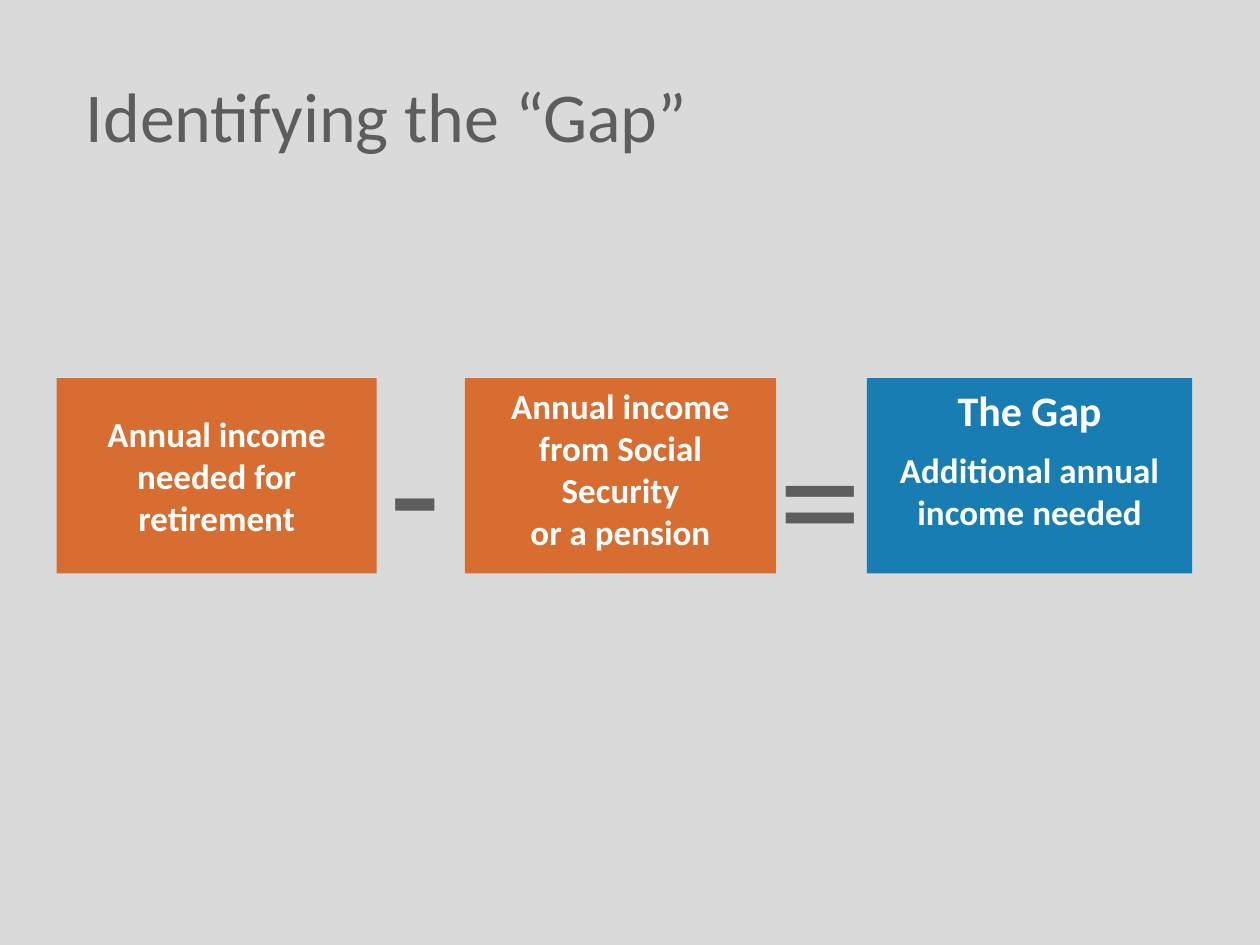
from dataclasses import dataclass

from pptx import Presentation
from pptx.dml.color import RGBColor
from pptx.enum.shapes import MSO_SHAPE
from pptx.enum.text import MSO_ANCHOR, PP_ALIGN
from pptx.util import Pt

RECT = MSO_SHAPE.RECTANGLE
TOP, MIDDLE = MSO_ANCHOR.TOP, MSO_ANCHOR.MIDDLE
LEFT, CENTER = PP_ALIGN.LEFT, PP_ALIGN.CENTER

GREY = RGBColor(0xDA, 0xDA, 0xDA)
DARK = RGBColor(0x5D, 0x5D, 0x5D)
ORANGE = RGBColor(0xD7, 0x6D, 0x31)
BLUE = RGBColor(0x17, 0x7D, 0xB3)
WHITE = RGBColor(0xFF, 0xFF, 0xFF)

FONT = "Calibri"
ROW, HIGH = 216, 111.6  # top and height of the row of terms


@dataclass
class Term:
    left: float
    width: float
    fill: RGBColor
    lines: list[tuple[str, int]]  # text and size of each paragraph
    anchor: MSO_ANCHOR = MIDDLE


@dataclass
class Sign:
    text: str
    left: float
    top: float


TERMS = [
    Term(32.4, 182.9, ORANGE, [("Annual income needed for retirement", 20)]),
    Term(265.7, 177.8, ORANGE,
         [("Annual income from Social Security\vor a pension", 20)], TOP),
    Term(495.4, 185.8, BLUE,
         [("The Gap", 24), ("Additional annual income needed", 20)], TOP),
]
SIGNS = [Sign("-", 215.3, ROW), Sign("=", 437.8, 219.6)]


def style(para, size: float, color: RGBColor, bold: bool, align: PP_ALIGN) -> None:
    para.alignment = align
    for run in para.runs:
        font = run.font
        font.name, font.size, font.bold = FONT, Pt(size), bold
        font.color.rgb = color


def draw_term(slide, term: Term) -> None:
    box = slide.shapes.add_shape(
        RECT, Pt(term.left), Pt(ROW), Pt(term.width), Pt(HIGH))
    box.shadow.inherit = False
    box.fill.solid()
    box.fill.fore_color.rgb = term.fill
    box.line.fill.background()
    frame = box.text_frame
    frame.word_wrap = True
    frame.vertical_anchor = term.anchor
    frame.margin_left = frame.margin_right = Pt(10)
    for i, (text, size) in enumerate(term.lines):
        para = frame.add_paragraph() if i else frame.paragraphs[0]
        para.text = text
        if i:
            para.space_before = Pt(8)
        style(para, size, WHITE, True, CENTER)


def draw_sign(slide, sign: Sign) -> None:
    box = slide.shapes.add_textbox(
        Pt(sign.left), Pt(sign.top), Pt(54.7), Pt(123.8))
    frame = box.text_frame
    frame.word_wrap = True
    frame.text = sign.text
    style(frame.paragraphs[0], 96, DARK, False, LEFT)


def main() -> None:
    deck = Presentation()
    deck.slide_width, deck.slide_height = Pt(720), Pt(540)
    slide = deck.slides.add_slide(deck.slide_layouts[5])
    slide.background.fill.solid()
    slide.background.fill.fore_color.rgb = GREY

    # Title
    title = slide.shapes.title
    title.left, title.top = Pt(41.8), Pt(41.8)
    title.width, title.height = Pt(678), Pt(47.5)
    frame = title.text_frame
    frame.vertical_anchor = MIDDLE
    frame.text = "Identifying the “Gap”"
    style(frame.paragraphs[0], 40, DARK, False, LEFT)

    # Equation: needed income - known income = gap
    for term in TERMS:
        draw_term(slide, term)
    for sign in SIGNS:
        draw_sign(slide, sign)

    deck.save("out.pptx")


if __name__ == "__main__":
    main()
